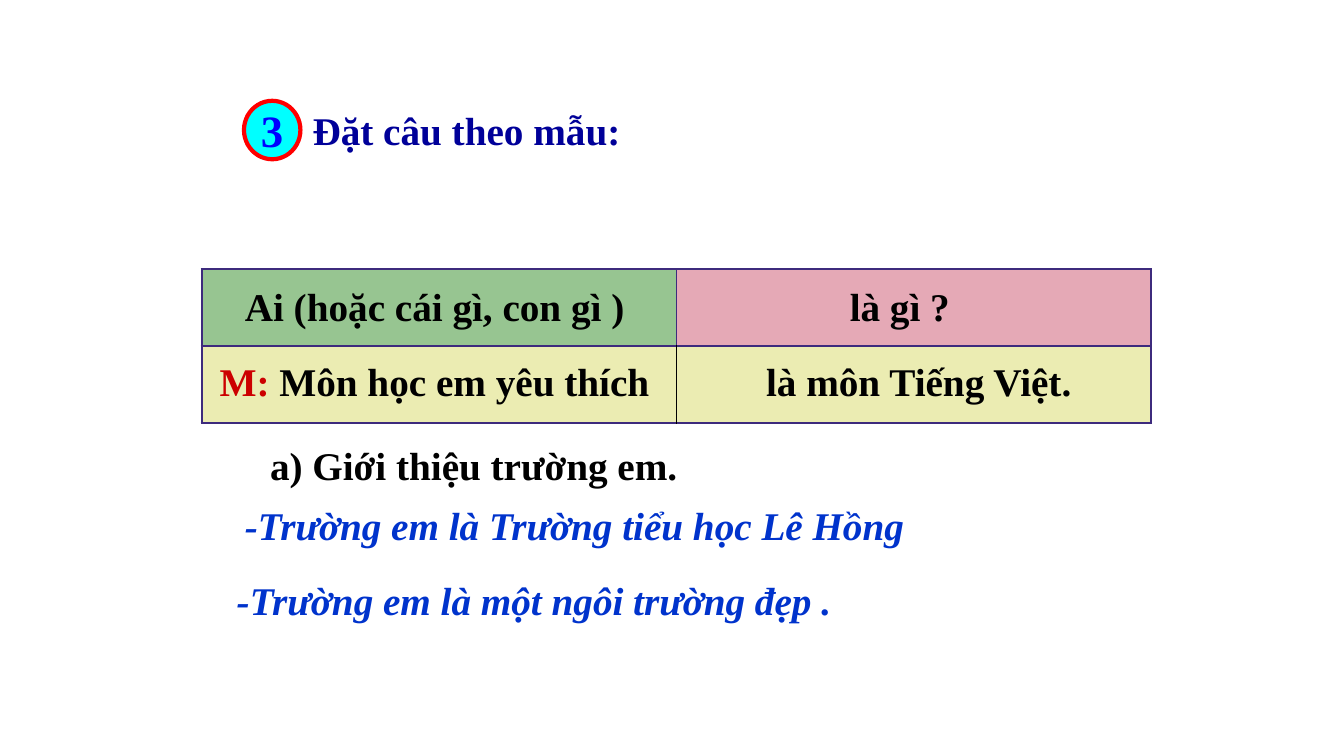
from dataclasses import dataclass

from lxml import etree
from pptx import Presentation
from pptx.dml.color import RGBColor
from pptx.enum.shapes import MSO_SHAPE
from pptx.enum.text import MSO_ANCHOR, MSO_AUTO_SIZE, PP_ALIGN
from pptx.oxml.ns import qn
from pptx.util import Inches, Pt

OVAL = MSO_SHAPE.OVAL
TOP, MIDDLE = MSO_ANCHOR.TOP, MSO_ANCHOR.MIDDLE
LEFT, CENTER = PP_ALIGN.LEFT, PP_ALIGN.CENTER
NO_FIT = MSO_AUTO_SIZE.NONE
TITLE_ONLY = 5
LINE_HEIGHT = 0.57


@dataclass(frozen=True)
class Theme:
    font: str = "Times New Roman"
    body_size: int = 28
    badge_size: int = 32
    text: str = "000000"
    title: str = "000099"
    answer: str = "0033CC"
    marker: str = "CC0000"
    badge_text: str = "0000FF"
    badge_fill: str = "00FFFF"
    badge_line: str = "FF0000"
    subject_fill: str = "97C591"
    predicate_fill: str = "E5A9B6"
    example_fill: str = "EBECB2"
    border: str = "3D2B7D"
    divider: str = "000000"


THEME = Theme()


def color(value):
    return RGBColor.from_string(value)


def add_span(para, text, ink=THEME.text, size=THEME.body_size, italic=False):
    span = para.add_run()
    span.text = text
    span.font.name = THEME.font
    span.font.size = Pt(size)
    span.font.bold = True
    span.font.italic = italic
    span.font.color.rgb = color(ink)


def add_line(slide, left, top, width, *spans, italic=False):
    """Add one line of text made of (text, colour) spans."""
    box = slide.shapes.add_textbox(
        Inches(left), Inches(top), Inches(width), Inches(LINE_HEIGHT))
    box.text_frame.word_wrap = True
    for text, ink in spans:
        add_span(box.text_frame.paragraphs[0], text, ink, italic=italic)


def set_title(slide, text):
    title = slide.shapes.title
    title.left, title.top = Inches(3), Inches(1)
    title.width, title.height = Inches(3.33), Inches(LINE_HEIGHT)
    frame = title.text_frame
    frame.vertical_anchor = TOP
    frame.auto_size = NO_FIT
    frame.word_wrap = True
    para = frame.paragraphs[0]
    para.alignment = LEFT
    add_span(para, text, THEME.title)


def add_badge(slide, number):
    badge = slide.shapes.add_shape(
        OVAL, Inches(2.42), Inches(1), Inches(0.56), Inches(0.58))
    badge.shadow.inherit = False
    badge.fill.solid()
    badge.fill.fore_color.rgb = color(THEME.badge_fill)
    badge.line.color.rgb = color(THEME.badge_line)
    badge.line.width = Pt(3)
    frame = badge.text_frame
    frame.word_wrap = False
    frame.vertical_anchor = MIDDLE
    para = frame.paragraphs[0]
    para.alignment = CENTER
    add_span(para, number, THEME.badge_text, THEME.badge_size)


def set_border(cell, side, ink, width):
    line = etree.SubElement(
        cell._tc.get_or_add_tcPr(), qn(f"a:ln{side}"), w=str(Pt(width)))
    fill = etree.SubElement(line, qn("a:solidFill"))
    etree.SubElement(fill, qn("a:srgbClr"), val=ink)


def add_pattern_table(slide, fills):
    rows, columns = len(fills), len(fills[0])
    table = slide.shapes.add_table(
        rows, columns, Inches(2), Inches(2.67), Inches(9.42), Inches(1.53)).table
    table.first_row = False
    table.horz_banding = False
    for row, row_fills in enumerate(fills):
        # The example row has a thin divider between its cells
        inner_sides = ("R", "L") if row == 1 else ()
        for column, fill in enumerate(row_fills):
            cell = table.cell(row, column)
            for side in "LRTB":
                if inner_sides and side == inner_sides[column]:
                    set_border(cell, side, THEME.divider, 1)
                else:
                    set_border(cell, side, THEME.border, 1.5)
            cell.fill.solid()
            cell.fill.fore_color.rgb = color(fill)


def main():
    deck = Presentation()
    deck.slide_width, deck.slide_height = Inches(13.33), Inches(7.5)
    slide = deck.slides.add_slide(deck.slide_layouts[TITLE_ONLY])

    # Heading
    add_badge(slide, "3")
    set_title(slide, "Đặt câu theo mẫu:")

    # Sentence pattern and its example
    add_pattern_table(slide, [
        (THEME.subject_fill, THEME.predicate_fill),
        (THEME.example_fill, THEME.example_fill),
    ])
    add_line(slide, 2.33, 2.75, 4.08, ("Ai (hoặc cái gì, con gì )", THEME.text))
    add_line(slide, 8.33, 2.75, 1.33, ("là gì ?", THEME.text))
    add_line(slide, 2.08, 3.5, 4.58,
             ("M:", THEME.marker), (" Môn học em yêu thích", THEME.text))
    add_line(slide, 7.5, 3.5, 3.33, ("là môn Tiếng Việt.", THEME.text))

    # Exercise and answers
    add_line(slide, 2.58, 4.33, 4.42, ("a) Giới thiệu trường em.", THEME.text))
    add_line(slide, 2.33, 4.92, 9,
             ("-Trường em là Trường tiểu học Lê Hồng", THEME.answer), italic=True)
    add_line(slide, 2.25, 5.67, 9,
             ("-Trường em là một ngôi trường đẹp .", THEME.answer), italic=True)

    deck.save("out.pptx")


if __name__ == "__main__":
    main()
